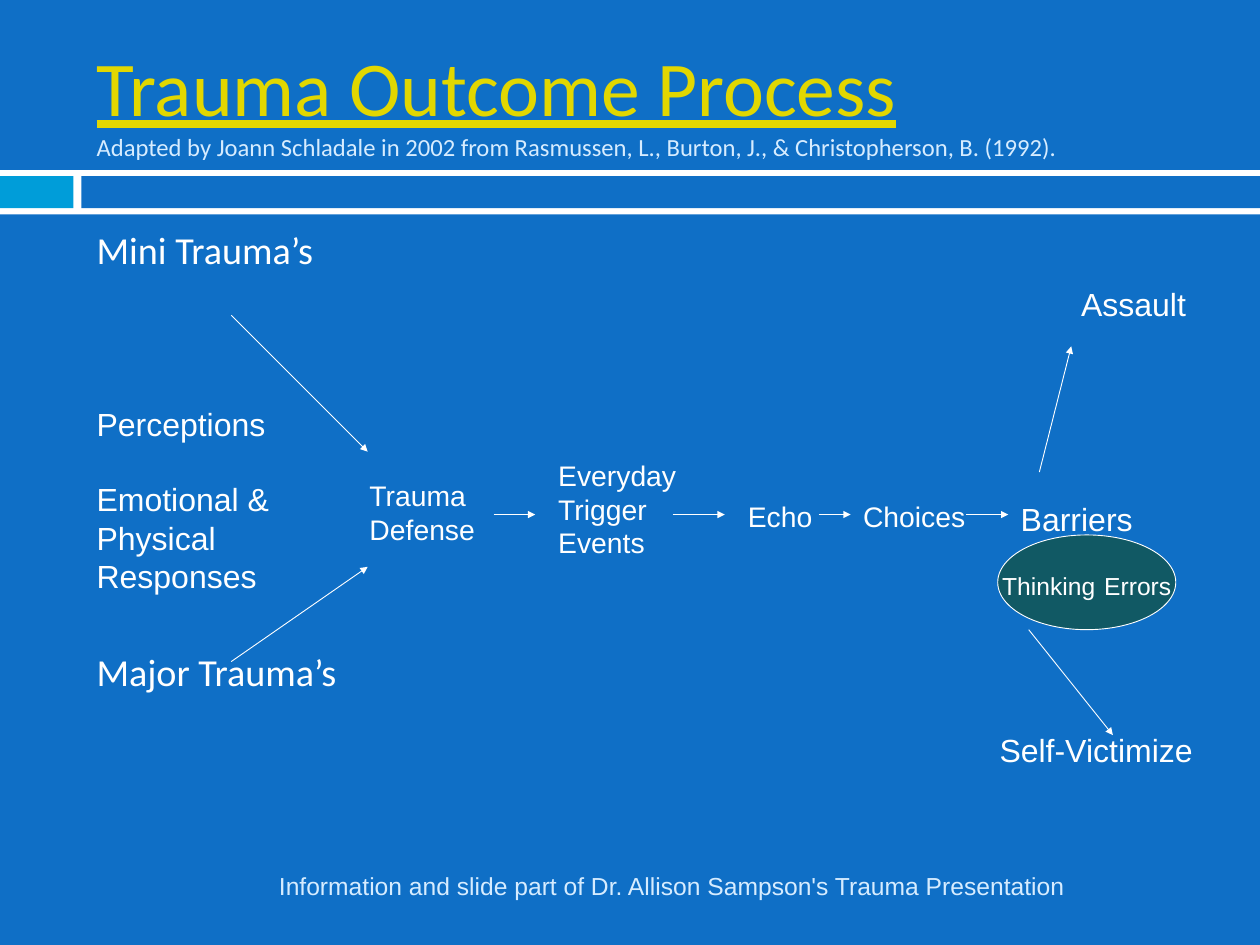
from pptx import Presentation
from pptx.dml.color import RGBColor
from pptx.enum.shapes import MSO_CONNECTOR, MSO_SHAPE
from pptx.enum.text import MSO_ANCHOR, MSO_AUTO_SIZE, PP_ALIGN
from pptx.oxml.ns import qn
from pptx.util import Inches, Pt
from lxml.etree import SubElement

BLUE, CYAN, TEAL = "0F6FC6", "009DD9", "115964"
WHITE, YELLOW, PALE = "FFFFFF", "E2D700", "D6ECFF"


def rgb(value):
    return RGBColor.from_string(value)


class SlideBuilder:
    def __init__(self, slide, font="Arial", color=WHITE, line_width=0.75):
        self.s = slide
        self.font, self.color, self.line_width = font, color, line_width

    def background(self, color):
        fill = self.s.background.fill
        fill.solid()
        fill.fore_color.rgb = rgb(color)

    def shape(self, kind, box, fill, outlined=False):
        sp = self.s.shapes.add_shape(kind, *map(Inches, box))
        sp.shadow.inherit = False
        sp.fill.solid()
        sp.fill.fore_color.rgb = rgb(fill)
        if outlined:
            sp.line.color.rgb = rgb(self.color)
            sp.line.width = Pt(self.line_width)
        else:
            sp.line.fill.background()
        return sp

    def run(self, p, text, size, color=None, font=None, underline=None):
        r = p.add_run()
        r.text = text
        r.font.color.rgb = rgb(color or self.color)
        formats = {"size": Pt(size), "name": font or self.font, "underline": underline}
        for name, value in formats.items():
            setattr(r.font, name, value)

    def frame(self, sp, wrap, anchor):
        tf = sp.text_frame
        formats = {
            "word_wrap": wrap, "vertical_anchor": anchor,
            "margin_left": Inches(0.14), "margin_right": Inches(0.14),
            "margin_top": Inches(0.07), "margin_bottom": Inches(0.07),
        }
        for name, value in formats.items():
            setattr(tf, name, value)
        return tf

    def text(self, box, lines, size, wrap=False, anchor=MSO_ANCHOR.TOP,
             align=PP_ALIGN.LEFT, **style):
        sp = self.s.shapes.add_textbox(*map(Inches, box))
        tf = self.frame(sp, wrap, anchor)
        tf.auto_size = MSO_AUTO_SIZE.NONE if wrap else MSO_AUTO_SIZE.SHAPE_TO_FIT_TEXT
        for i, line in enumerate(lines):
            p = tf.add_paragraph() if i else tf.paragraphs[0]
            p.alignment = align
            self.run(p, line, size, **style)
        return tf

    def arrow(self, start, end):
        c = self.s.shapes.add_connector(
            MSO_CONNECTOR.STRAIGHT, *map(Inches, (*start, *end)))
        c.line.color.rgb = rgb(self.color)
        c.line.width = Pt(self.line_width)
        SubElement(c.line._get_or_add_ln(), qn("a:tailEnd"), type="triangle")
        SubElement(c._element.spPr, qn("a:effectLst"))


def main():
    prs = Presentation()
    prs.slide_width, prs.slide_height = Inches(14.22), Inches(10.67)
    b = SlideBuilder(prs.slides.add_slide(prs.slide_layouts[6]))
    b.background(BLUE)

    # Band under the title
    for box, fill in [((0, 1.92, 14.22, 0.5), WHITE),
                      ((0, 1.99, 0.83, 0.36), CYAN),
                      ((0.92, 1.99, 13.3, 0.36), BLUE)]:
        b.shape(MSO_SHAPE.RECTANGLE, box, fill)

    # Title with its source, and the footer
    tf = b.text((0.95, 0.36, 12.68, 1.54), ["Trauma Outcome Process"], 63, wrap=True,
                anchor=MSO_ANCHOR.MIDDLE, color=YELLOW, font="Calibri", underline=True)
    b.run(tf.add_paragraph(), "Adapted by Joann Schladale in 2002 from Rasmussen, L., "
          "Burton, J., & Christopherson, B. (1992).", 20, PALE, "Calibri")
    b.text((0.95, 9.72, 11.21, 0.57),
           ["Information and slide part of Dr. Allison Sampson's Trauma Presentation"],
           20, wrap=True, anchor=MSO_ANCHOR.MIDDLE, align=PP_ALIGN.RIGHT, color=PALE)

    # Kinds of trauma
    for top, label in [(2.49, "Mini Trauma’s"), (7.25, "Major Trauma’s")]:
        b.text((0.95, top, 4, 0.67), [label], 31, wrap=True, font="Calibri")

    # Stages and outcomes
    stages = [
        ((4.03, 5.33, 1.49, 0.92), ["Trauma", "Defense"], 23),
        ((6.16, 5.1, 1.63, 1.27), ["Everyday", "Trigger", "Events"], 23),
        ((8.3, 5.57, 1.07, 0.53), ["Echo"], 23),
        ((9.6, 5.57, 1.45, 0.53), ["Choices"], 23),
        ((11.38, 5.57, 1.56, 0.58), ["Barriers"], 26),
        ((12.06, 3.14, 1.48, 0.58), ["Assault"], 26),
        ((11.14, 8.18, 2.49, 0.58), ["Self-Victimize"], 26),
    ]
    for box, lines, size in stages:
        b.text(box, lines, size)
    tf = b.text((0.95, 4.5, 2.26, 2.33),
                ["Perceptions", "Emotional &", "Physical", "Responses"], 26)
    tf.paragraphs[1].space_before = Pt(30)

    # Thinking errors
    sp = b.shape(MSO_SHAPE.OVAL, (11.26, 6.04, 2.01, 1.07), TEAL, outlined=True)
    p = b.frame(sp, False, MSO_ANCHOR.MIDDLE).paragraphs[0]
    p.alignment = PP_ALIGN.CENTER
    for word, size in [("Thinking", 20), (" ", 26), ("Errors", 20)]:
        b.run(p, word, size)

    # Arrows along the row of stages
    row_y = 5.81
    for x1, x2 in [(5.57, 6.04), (7.59, 8.18), (9.24, 9.6), (10.9, 11.38)]:
        b.arrow((x1, row_y), (x2, row_y))

    # Arrows into the defense and out to the outcomes
    for start, end in [((2.61, 3.56), (4.15, 5.1)), ((2.61, 7.47), (4.15, 6.4)),
                       ((11.73, 5.33), (12.09, 3.91)), ((11.61, 7.11), (12.56, 8.3))]:
        b.arrow(start, end)

    prs.save("out.pptx")


if __name__ == "__main__":
    main()
